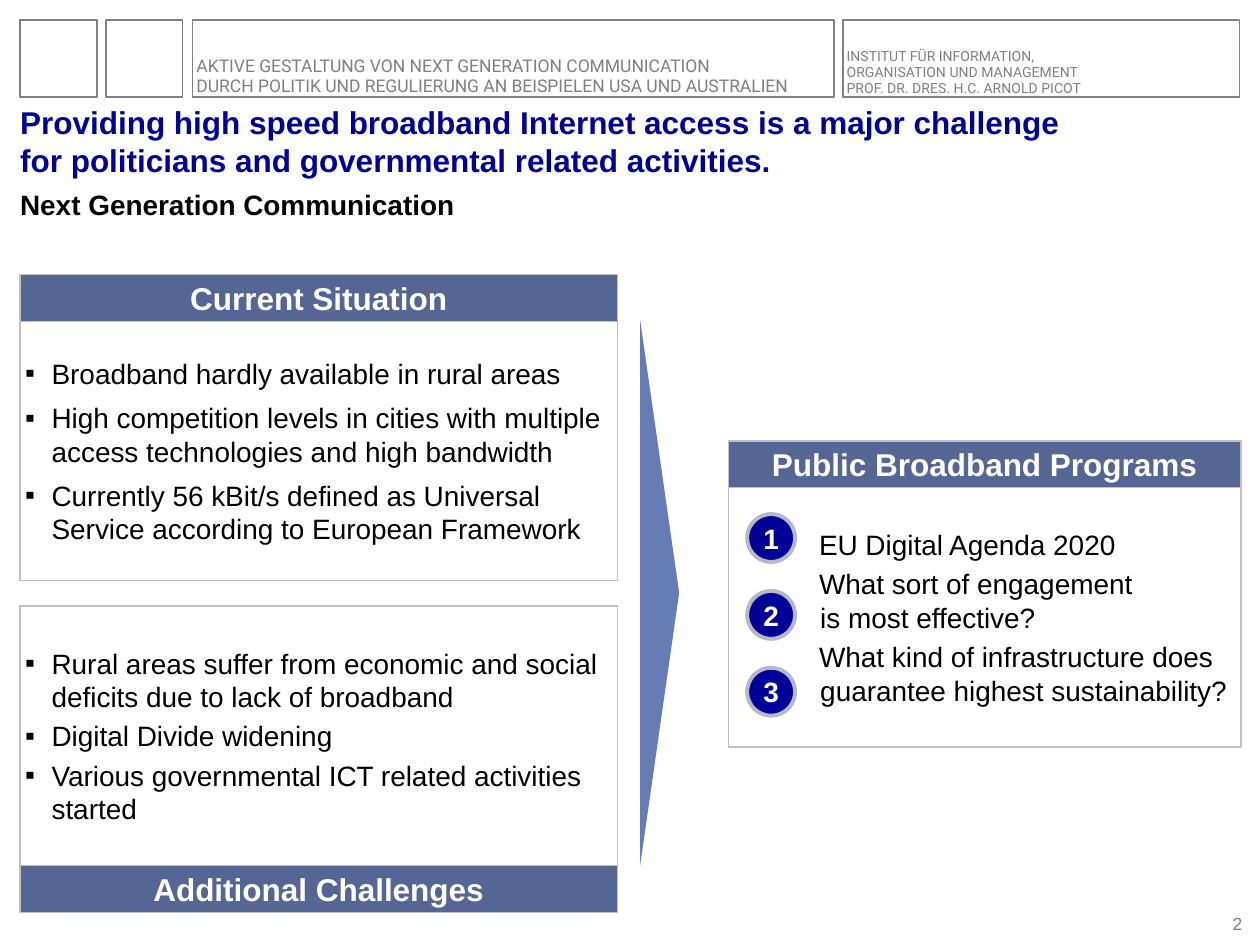
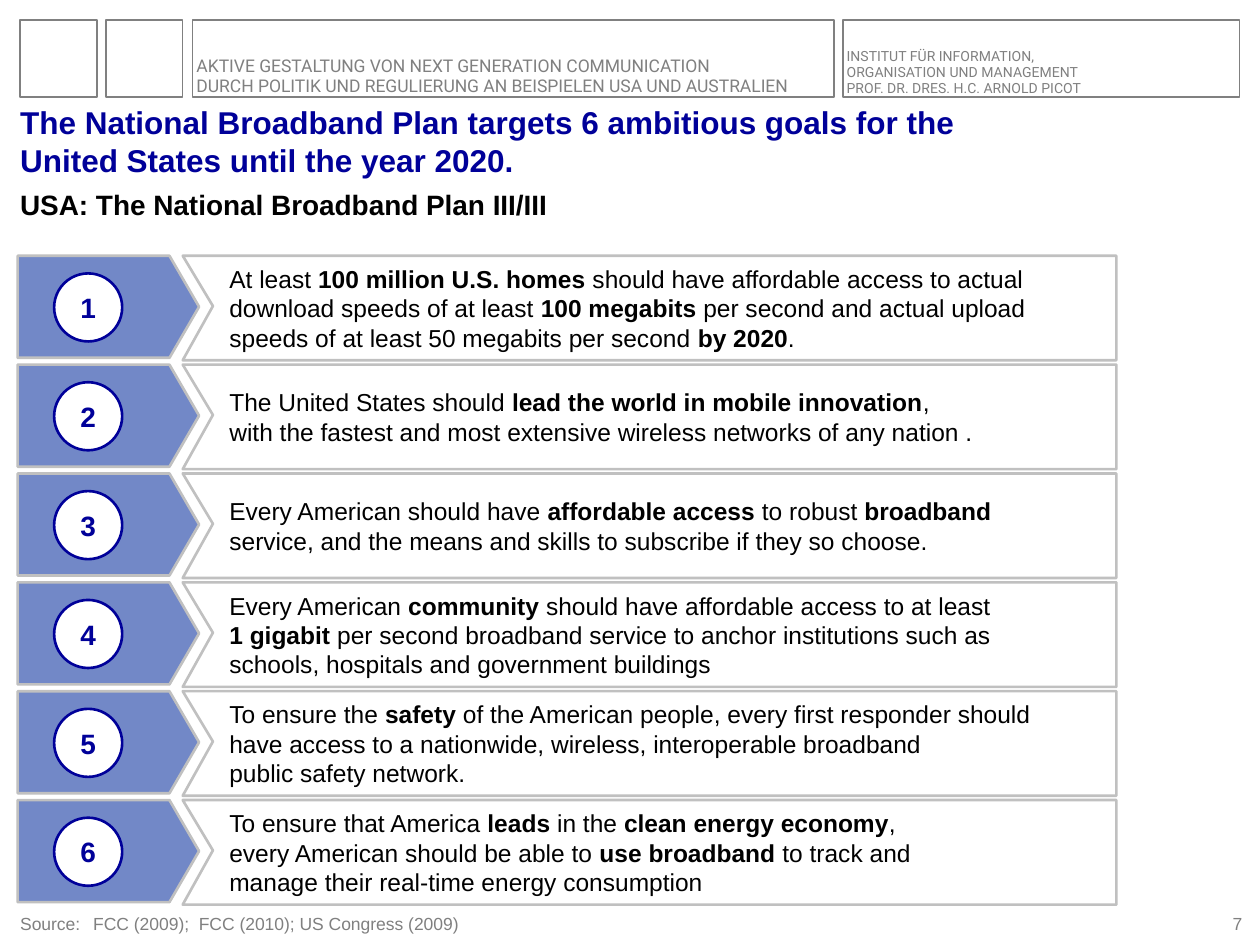
"""Build two slides on public broadband programs and the US broadband plan."""
from lxml.etree import SubElement
from pptx import Presentation
from pptx.dml.color import RGBColor
from pptx.enum.shapes import MSO_SHAPE
from pptx.enum.text import MSO_ANCHOR, PP_ALIGN
from pptx.oxml.ns import qn
from pptx.util import Inches, Pt

NAVY = RGBColor(0x00, 0x00, 0x99)
SLATE = RGBColor(0x55, 0x65, 0x94)
ARROW_BLUE = RGBColor(0x67, 0x7B, 0xB4)
GOAL_BLUE = RGBColor(0x72, 0x88, 0xC7)
RING_GRAY = RGBColor(0xB4, 0xB8, 0xC8)
LIGHT_GRAY = RGBColor(0xC0, 0xC0, 0xC0)
GRAY = RGBColor(0x80, 0x80, 0x80)
BLACK = RGBColor(0x00, 0x00, 0x00)
WHITE = RGBColor(0xFF, 0xFF, 0xFF)

BODY_FONT = "Arial"
HEADER_FONT = "Roboto"
LEFT = 0.16

HEADER_TOP, HEADER_HEIGHT = 0.16, 0.61
HEADER_FRAMES = [(0.16, 0.61), (0.84, 0.61), (1.53, 5.09), (6.69, 3.15)]
HEADER_TEXTS = [
    ("AKTIVE GESTALTUNG VON NEXT GENERATION COMMUNICATION\n"
     "DURCH POLITIK UND REGULIERUNG AN BEISPIELEN USA UND AUSTRALIEN",
     (1.56, 0.36, 5.06, 0.41), 10),
    ("INSTITUT FÜR INFORMATION,\nORGANISATION UND MANAGEMENT\n"
     "PROF. DR. DRES. H.C. ARNOLD PICOT",
     (6.72, 0.31, 2.6, 0.46), 8),
]

PROGRAMS_TITLE = ("Providing high speed broadband Internet access is a major challenge\n"
                  "for politicians and governmental related activities.")
PANEL_HEIGHT, BAND_HEIGHT = 2.06, 0.37
PANELS = [
    dict(heading="Current Situation", left=LEFT, top=2.55, width=4.74,
         band_top=2.18, bullet="▪", gaps=(6, 6, 3.2), items=[
             "Broadband hardly available in rural areas",
             "High competition levels in cities with multiple access technologies "
             "and high bandwidth",
             "Currently 56 kBit/s defined as Universal Service according to "
             "European Framework"]),
    dict(heading="Additional Challenges", left=LEFT, top=4.81, width=4.74,
         band_top=6.87, bullet="▪", gaps=(3.2, 3.2, 3.2), items=[
             "Rural areas suffer from economic and social deficits due to lack of broadband",
             "Digital Divide widening",
             "Various governmental ICT related activities started"]),
    dict(heading="Public Broadband Programs", left=5.78, top=3.87, width=4.07,
         band_top=3.5, bullet=None, gaps=(3.2, 3.2, 3.2), items=[
             "EU Digital Agenda 2020",
             "What sort of engagement\nis most effective?",
             "What kind of infrastructure does guarantee highest sustainability?"]),
]
PROGRAM_COUNT, PROGRAM_TOP, PROGRAM_STEP = 3, 4.08, 0.61

PLAN_TITLE = ("The National Broadband Plan targets 6 ambitious goals for the\n"
              "United States until the year 2020.")
PLAN_SOURCE = "Source:\tFCC (2009);  FCC (2010); US Congress (2009)"
GOALS = [
    "At least **100 million U.S. homes **should have affordable access to actual\n"
    "download speeds of at least **100 megabits **per second and actual upload\n"
    "speeds of at least 50 megabits per second **by 2020**.",
    "The United States should **lead the world in mobile innovation**,\n"
    "with the fastest and most extensive wireless networks of any nation .",
    "Every American should have **affordable access **to robust **broadband**\n"
    "service, and the means and skills to subscribe if they so choose.",
    "Every American **community** should have affordable access to at least\n"
    "**1 gigabit **per second broadband service to anchor institutions such as\n"
    "schools, hospitals and government buildings",
    "To ensure the **safety** of the American people, every first responder should\n"
    "have access to a nationwide, wireless, interoperable broadband\n"
    "public safety network.",
    "To ensure that America **leads** in the **clean energy economy**,\n"
    "every American should be able to **use broadband **to track and\n"
    "manage their real-time energy consumption",
]
GOAL_TOP, GOAL_LAST_TOP, GOAL_HEIGHT = 2.03, 6.35, 0.83
GOAL_LEFT, GOAL_NOTCH, GOAL_RIGHT = 1.45, 1.69, 8.86


def write_text(box, texts, size=16, color=BLACK, bold=False, font=BODY_FONT,
               align=PP_ALIGN.LEFT, anchor=MSO_ANCHOR.MIDDLE, inset=0,
               indent=None, bullet=None, gaps=(), line_spacing=None):
    """Write paragraphs, with bold toggled by ** and lines broken by newlines."""
    frame = box.text_frame
    frame.word_wrap = True
    frame.vertical_anchor = anchor
    frame.margin_left = frame.margin_right = Inches(inset)
    frame.margin_top = frame.margin_bottom = Inches(inset)
    for number, text in enumerate([texts] if isinstance(texts, str) else texts):
        paragraph = frame.add_paragraph() if number else frame.paragraphs[0]
        paragraph.alignment = align
        if indent:
            properties = paragraph._p.get_or_add_pPr()
            properties.set("marL", str(Inches(indent[0])))
            properties.set("indent", str(Inches(indent[1])))
            if bullet:
                SubElement(properties, qn("a:buFont"), typeface=BODY_FONT)
                SubElement(properties, qn("a:buChar"), char=bullet)
        if gaps:
            paragraph.space_after = Pt(gaps[number])
        if line_spacing:
            paragraph.line_spacing = line_spacing
        for part, piece in enumerate(text.split("**")):
            for line, words in enumerate(piece.split("\n")):
                if line:
                    paragraph.add_line_break()
                if words:
                    span = paragraph.add_run()
                    span.text = words
                    span.font.name = font
                    span.font.size = Pt(size)
                    span.font.bold = bold or part % 2 == 1
                    span.font.color.rgb = color


def paint(shape, fill=None, line=None, weight=0.75):
    """Set the fill and outline of a shape without shadow."""
    shape.shadow.inherit = False
    if fill is None:
        shape.fill.background()
    else:
        shape.fill.solid()
        shape.fill.fore_color.rgb = fill
    if line is None:
        shape.line.fill.background()
    else:
        shape.line.color.rgb = line
        shape.line.width = Pt(weight)


def add_box(page, kind, place, fill=None, line=None, weight=0.75):
    """Add a painted preset shape."""
    shape = page.shapes.add_shape(kind, *map(Inches, place))
    paint(shape, fill, line, weight)
    return shape


def add_label(page, text, place, **style):
    """Add a text box."""
    write_text(page.shapes.add_textbox(*map(Inches, place)), text, **style)


def add_number(page, number, left, top, size, fill, line, weight, color):
    """Add a numbered circle."""
    circle = add_box(page, MSO_SHAPE.OVAL, (left, top, size, size), fill, line, weight)
    write_text(circle, str(number), color=color, bold=True, align=PP_ALIGN.CENTER)


def add_page(deck, title, subtitle, number):
    """Add a slide with header, titles and page number."""
    page = deck.slides.add_slide(deck.slide_layouts[6])
    for left, width in HEADER_FRAMES:
        add_box(page, MSO_SHAPE.RECTANGLE, (left, HEADER_TOP, width, HEADER_HEIGHT), line=GRAY)
    for text, place, size in HEADER_TEXTS:
        add_label(page, text, place, size=size, color=GRAY, font=HEADER_FONT,
                  anchor=MSO_ANCHOR.BOTTOM, line_spacing=0.95)
    add_label(page, title, (LEFT, 0.84, 9.68, 0.58), size=18, color=NAVY, bold=True,
              anchor=MSO_ANCHOR.BOTTOM)
    add_label(page, subtitle, (LEFT, 1.49, 7.64, 0.27), bold=True, anchor=MSO_ANCHOR.TOP)
    add_label(page, str(number), (9.58, 7.24, 0.28, 0.17), size=10, color=GRAY,
              align=PP_ALIGN.RIGHT, anchor=MSO_ANCHOR.BOTTOM)
    return page


def add_panel(page, heading, left, top, width, band_top, bullet, gaps, items):
    """Add a framed list with its heading band."""
    body = add_box(page, MSO_SHAPE.RECTANGLE, (left, top, width, PANEL_HEIGHT), line=LIGHT_GRAY)
    write_text(body, items, inset=0.04, bullet=bullet, gaps=gaps,
               indent=(0.21, -0.21) if bullet else (0.69, -0.01))
    band = add_box(page, MSO_SHAPE.RECTANGLE, (left, band_top, width, BAND_HEIGHT),
                   SLATE, LIGHT_GRAY)
    write_text(band, heading, size=18, color=WHITE, bold=True,
               align=PP_ALIGN.CENTER, inset=0.04)


def add_goal(page, number, text, top):
    """Add one numbered goal row."""
    bottom = top + GOAL_HEIGHT
    outline = [(GOAL_LEFT, top), (GOAL_NOTCH, top + 0.4), (GOAL_LEFT, bottom),
               (GOAL_RIGHT, bottom), (GOAL_RIGHT, top)]
    points = [(Inches(x), Inches(y)) for x, y in outline]
    builder = page.shapes.build_freeform(*points[0])
    builder.add_line_segments(points[1:], close=True)
    paint(builder.convert_to_shape(), WHITE, LIGHT_GRAY, 1.5)
    arrow = add_box(page, MSO_SHAPE.PENTAGON, (0.14, top, 1.44, 0.81),
                    GOAL_BLUE, LIGHT_GRAY, 1.5)
    arrow.adjustments[0] = 0.29
    add_label(page, text, (1.77, top, 7.09, GOAL_HEIGHT), size=14, inset=0.05)
    add_number(page, number, 0.43, top + 0.14, 0.54, WHITE, NAVY, 1.5, NAVY)


def build_programs(deck):
    """Build the slide on the situation and public programs."""
    page = add_page(deck, PROGRAMS_TITLE, "Next Generation Communication", 2)
    for panel in PANELS:
        add_panel(page, **panel)
    arrow = add_box(page, MSO_SHAPE.ISOSCELES_TRIANGLE, (3.07, 4.55, 4.33, 0.31), ARROW_BLUE)
    arrow.rotation = 90
    for index in range(PROGRAM_COUNT):
        add_number(page, index + 1, 5.93, PROGRAM_TOP + index * PROGRAM_STEP, 0.38,
                   NAVY, RING_GRAY, 2.25, WHITE)


def build_plan(deck):
    """Build the slide on the goals of the national plan."""
    page = add_page(deck, PLAN_TITLE, "USA: The National Broadband Plan III/III", 7)
    add_label(page, PLAN_SOURCE, (LEFT, 7.24, 8.78, 0.17), size=10, color=GRAY,
              anchor=MSO_ANCHOR.BOTTOM, indent=(0.58, -0.58))
    step = (GOAL_LAST_TOP - GOAL_TOP) / (len(GOALS) - 1)
    for index, goal in enumerate(GOALS):
        add_goal(page, index + 1, goal, GOAL_TOP + index * step)


def main():
    """Build and save the deck."""
    deck = Presentation()
    deck.slide_width, deck.slide_height = Inches(10), Inches(7.5)
    build_programs(deck)
    build_plan(deck)
    deck.save("out.pptx")


if __name__ == "__main__":
    main()
